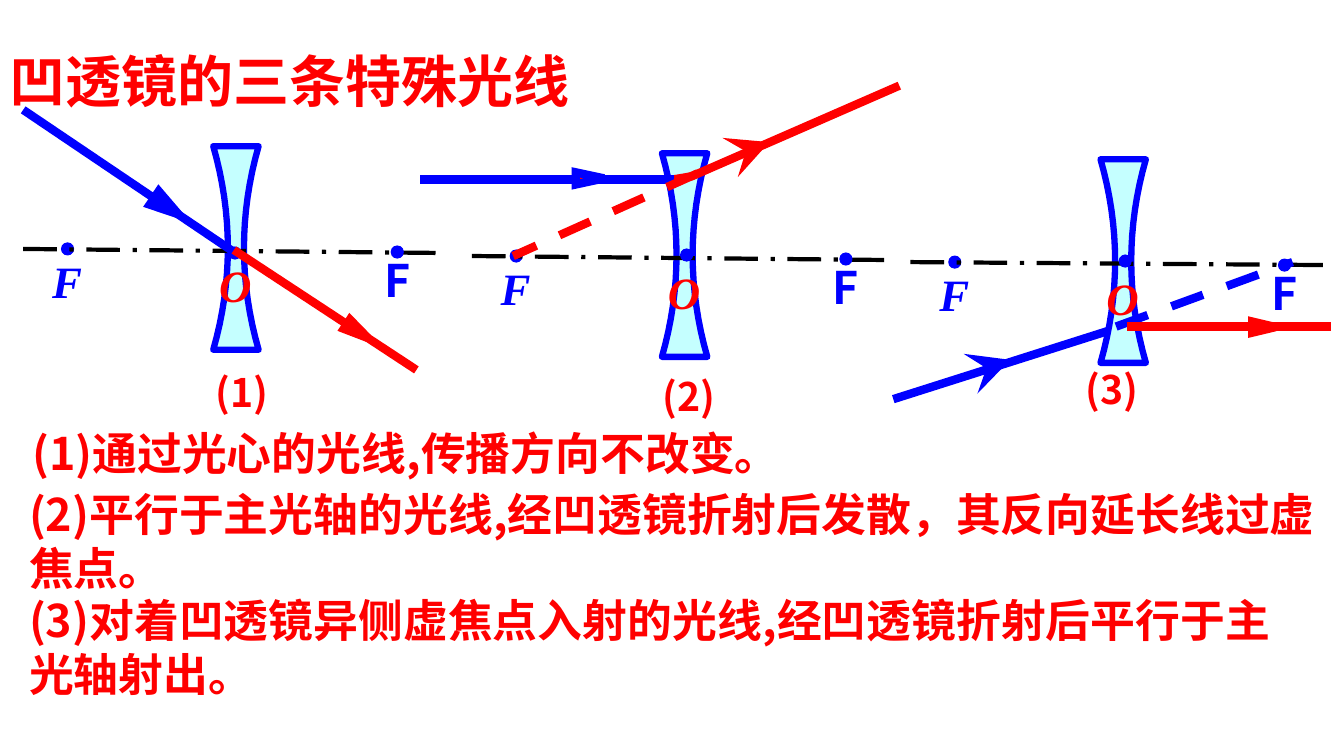
from dataclasses import dataclass

from lxml import etree
from pptx import Presentation
from pptx import util as u
from pptx.dml.color import RGBColor
from pptx.enum import dml, shapes, text
from pptx.oxml import ns

BLUE = RGBColor(0x00, 0x00, 0xFF)
RED = RGBColor(0xFF, 0x00, 0x00)
BLACK = RGBColor(0x00, 0x00, 0x00)
GLASS = RGBColor(0xC5, 0xFF, 0xFF)
SANS = "Noto Sans CJK SC"
TITLE_FONT = "Noto Sans CJK JP"
SERIF = "Times New Roman"
RAY_WIDTH = 6
LENS_HEIGHT = 2.02
LENS_STEPS = 16


@dataclass
class Diagram:
    left: float
    axis_top: float
    axis_drop: float
    centre_dot: tuple[float, float]


@dataclass
class Ray:
    start: tuple[float, float]
    end: tuple[float, float]
    color: RGBColor
    dash: dml.MSO_LINE | None = None
    stealth: bool = False


@dataclass
class Marker:
    left: float
    top: float
    width: float
    height: float
    rotation: float
    fill: RGBColor
    line: RGBColor


@dataclass
class Label:
    words: str
    left: float
    top: float
    width: float
    height: float
    size: int = 32
    font: str = SANS
    color: RGBColor = RED
    italic: bool = False
    centred: bool = False
    wrap: bool = True


DIAGRAMS = [
    Diagram(9.03, 2.6, 0.03, (2.07, -0.07)),
    Diagram(4.68, 2.54, 0.04, (2.07, -0.07)),
    Diagram(0.23, 2.47, 0.04, (2.04, -0.02)),
]
BENT_RAY = [(6.68, 1.78), (6.86, 1.75), (8.92, 0.85)]
RAYS = [
    Ray((7.35, 1.52), (7.63, 1.41), RED, stealth=True),
    Ray((8.86, 3.96), (11, 3.28), BLUE),
    Ray((9.79, 3.65), (10.02, 3.57), BLUE, stealth=True),
    Ray((4.17, 1.78), (6.68, 1.78), BLUE),
    Ray((11.07, 3.24), (12.82, 2.6), BLUE, dml.MSO_LINE.DASH),
    Ray((6.92, 1.72), (5.09, 2.54), RED, dml.MSO_LINE.DASH),
    Ray((0.23, 1.09), (2.32, 2.5), BLUE),
    Ray((2.32, 2.48), (4.13, 3.67), RED),
    Ray((11.18, 3.24), (13.2, 3.24), RED),
]
MARKERS = [
    Marker(5.79, 1.63, 0.12, 0.28, 90, RED, BLUE),
    Marker(1.57, 1.9, 0.16, 0.29, 124, BLUE, BLUE),
    Marker(3.49, 3.16, 0.11, 0.25, 123.4, RED, RED),
    Marker(12.48, 3.13, 0.11, 0.23, 90, RED, RED),
]
LABELS = [
    Label("凹透镜的三条特殊光线", 0, 0.41, 5.89, 0.77, 40, TITLE_FONT),
    Label("(1)通过光心的光线,传播方向不改变。", 0.22, 4.17, 9.78, 0.64),
    Label("(2)平行于主光轴的光线,经凹透镜折射后发散，其反向延长线过虚焦点。",
          0.19, 4.78, 12.97, 1.18),
    Label("(3)对着凹透镜异侧虚焦点入射的光线,经凹透镜折射后平行于主光轴射出。",
          0.19, 5.83, 12.9, 1.18),
    Label("(1)", 2.04, 3.6, 0.8, 0.57, 28, wrap=False),
    Label("(2)", 6.47, 3.64, 0.8, 0.57, 28, wrap=False),
    Label("(3)", 10.67, 3.58, 0.8, 0.57, 28, wrap=False),
]


def style_outline(shape, color: RGBColor, width: float) -> None:
    shape.shadow.inherit = False
    shape.line.color.rgb = color
    shape.line.width = u.Pt(width)


def add_preset(page, kind, left: float, top: float, width: float, height: float,
               fill: RGBColor, line: RGBColor, line_width: float):
    shape = page.shapes.add_shape(kind, u.Inches(left), u.Inches(top),
                                  u.Inches(width), u.Inches(height))
    shape.fill.solid()
    shape.fill.fore_color.rgb = fill
    style_outline(shape, line, line_width)
    return shape


def add_dot(page, left: float, top: float) -> None:
    add_preset(page, shapes.MSO_SHAPE.OVAL, left, top, 0.12, 0.12, BLUE, BLUE, 0.75)


def add_marker(page, marker: Marker) -> None:
    triangle = add_preset(page, shapes.MSO_SHAPE.ISOSCELES_TRIANGLE, marker.left,
                          marker.top, marker.width, marker.height,
                          marker.fill, marker.line, RAY_WIDTH)
    triangle.rotation = marker.rotation
    outline = triangle.line._get_or_add_ln()
    etree.SubElement(outline, ns.qn("a:miter"), lim="800000")


def add_ray(page, ray: Ray, width: float = RAY_WIDTH) -> None:
    ends = [u.Inches(value) for value in ray.start + ray.end]
    connector = page.shapes.add_connector(shapes.MSO_CONNECTOR.STRAIGHT, *ends)
    connector.line.color.rgb = ray.color
    connector.line.width = u.Pt(width)
    if ray.dash is not None:
        connector.line.dash_style = ray.dash
    if ray.stealth:
        outline = connector.line._get_or_add_ln()
        etree.SubElement(outline, ns.qn("a:tailEnd"), type="stealth", w="lg", len="lg")
    etree.SubElement(connector._element.spPr, ns.qn("a:effectLst"))


def add_outline(page, points: list[tuple[float, float]], closed: bool):
    corners = [(u.Inches(across), u.Inches(down)) for across, down in points]
    builder = page.shapes.build_freeform(*corners[0])
    builder.add_line_segments(corners[1:], close=closed)
    return builder.convert_to_shape()


def add_lens(page, centre: float, top: float) -> None:
    right, left = [], []
    for step in range(LENS_STEPS + 1):
        bend = 2 * step / LENS_STEPS - 1
        half_width = 0.08 + 0.145 * bend ** 2
        height = top + LENS_HEIGHT * step / LENS_STEPS
        right.append((centre + half_width, height))
        left.append((centre - half_width, height))
    lens = add_outline(page, right + left[::-1], True)
    lens.fill.solid()
    lens.fill.fore_color.rgb = GLASS
    style_outline(lens, BLUE, 4.5)


def add_label(page, label: Label) -> None:
    box = page.shapes.add_textbox(u.Inches(label.left), u.Inches(label.top),
                                  u.Inches(label.width), u.Inches(label.height))
    frame = box.text_frame
    frame.text = label.words
    frame.word_wrap = label.wrap
    frame.auto_size = text.MSO_AUTO_SIZE.SHAPE_TO_FIT_TEXT
    para = frame.paragraphs[0]
    if label.centred:
        para.alignment = text.PP_ALIGN.CENTER
    for span in para.runs:
        span.font.size = u.Pt(label.size)
        span.font.bold = True
        span.font.italic = label.italic
        span.font.color.rgb = label.color
        span.font.name = label.font
        etree.SubElement(span._r.get_or_add_rPr(), ns.qn("a:ea"), typeface=label.font)


def add_diagram(page, diagram: Diagram) -> None:
    left, top = diagram.left, diagram.axis_top
    add_dot(page, left + 0.38, top - 0.06)
    add_lens(page, left + 2.11, top - 1.02)
    axis = Ray((left, top), (left + 4.17, top + diagram.axis_drop), BLACK,
               dml.MSO_LINE.LONG_DASH_DOT)
    add_ray(page, axis, 3)
    add_dot(page, left + diagram.centre_dot[0], top + diagram.centre_dot[1])
    add_dot(page, left + 3.65, top - 0.03)
    add_label(page, Label("O", left + 1.79, top + 0.04, 0.63, 0.63,
                          font=SERIF, italic=True, centred=True))
    add_label(page, Label("F", left + 3.36, top - 0.01, 0.7, 0.64,
                          color=BLUE, centred=True))
    add_label(page, Label("F", left + 0.12, top, 0.63, 0.64, font=SERIF,
                          color=BLUE, italic=True, centred=True))


def main() -> None:
    deck = Presentation()
    deck.slide_width, deck.slide_height = u.Inches(13.33), u.Inches(7.5)
    page = deck.slides.add_slide(deck.slide_layouts[6])
    for diagram in DIAGRAMS:
        add_diagram(page, diagram)
    bent_ray = add_outline(page, BENT_RAY, False)
    bent_ray.fill.background()
    style_outline(bent_ray, RED, RAY_WIDTH)
    for ray in RAYS:
        add_ray(page, ray)
    for marker in MARKERS:
        add_marker(page, marker)
    for label in LABELS:
        add_label(page, label)
    deck.save("out.pptx")


if __name__ == "__main__":
    main()
